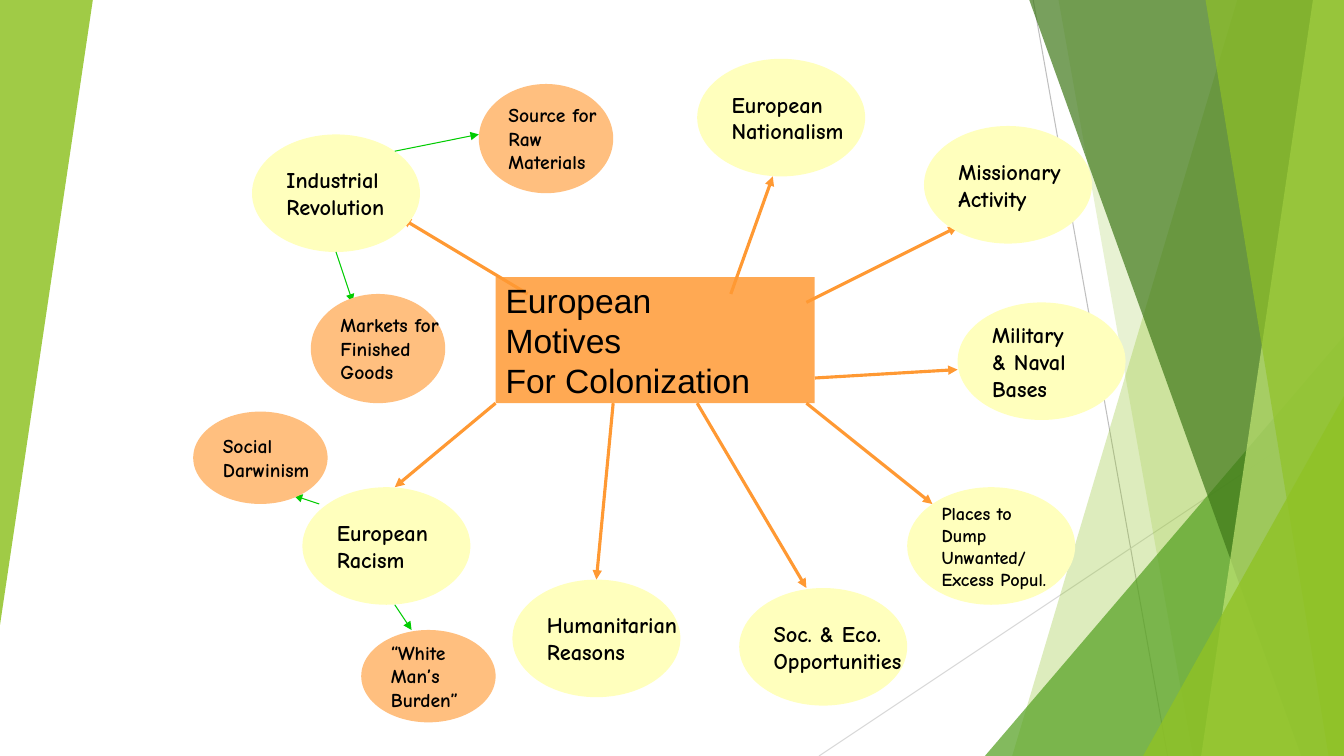
from copy import deepcopy

from pptx import Presentation
from pptx.dml.color import RGBColor
from pptx.enum.shapes import MSO_CONNECTOR as CONN, MSO_SHAPE as SHAPE
from pptx.enum.text import MSO_ANCHOR as ANCHOR, PP_ALIGN as ALIGN
from pptx.oxml.ns import qn
from pptx.util import Pt
from lxml.etree import SubElement

W, H = 960, 540
COLORS = {
    "lime": "90C226", "green": "54A021", "forest": "3F7819", "pale": "C0E474",
    "gray": "BFBFBF", "silver": "D9D9D9", "orange": "FF9933", "peach": "FFBF7F",
    "cream": "FFFFBD", "arrow": "00CC00", "black": "000000",
}
MOTIVE_SIZE = (120, 84)

MOTIVES_BEHIND = [
    ("Industrial\nRevolution", (180, 96), (377, 210), (287, 156), 16),
    ("European\vNationalism", (498, 42), (522, 210), (552, 126), 16),
    ("Missionary\vActivity", (660, 90), (576, 216), (684, 162), 16),
    ("Military\v& Naval\vBases", (684, 216), (582, 270), (684, 264), 16),
]
MOTIVES_FRONT = [
    ("Places to\vDump\vUnwanted/\vExcess Popul.", (648, 348), (576, 288), (666, 360), 13),
    ("Soc. & Eco.\vOpportunities", (528, 420), (498, 288), (576, 420), 16),
    ("Humanitarian\vReasons", (366, 414), (438, 288), (426, 414), 16),
    ("European\vRacism", (216, 348), (354, 288), (282, 348), 16),
]
DETAILS = [
    ("Source for\nRaw\nMaterials", (342, 60, 96, 78), (282, 108), (342, 96)),
    ("Markets for\vFinished\vGoods", (222, 210, 96, 78), (240, 180), (252, 216)),
    ("“White\vMan’s\vBurden”", (258, 450, 96, 66), (282, 432), (294, 450)),
    ("Social\vDarwinism", (138, 294, 96, 66), (228, 360), (210, 354)),
]


def rgb(name):
    return RGBColor.from_string(COLORS[name])


def paint(sp, color, alpha=100):
    sp.shadow.inherit = False
    sp.line.fill.background()
    sp.fill.solid()
    sp.fill.fore_color.rgb = rgb(color)
    if alpha < 100:
        clr = sp.fill._xPr.find(".//" + qn("a:srgbClr"))
        SubElement(clr, qn("a:alpha")).set("val", str(alpha * 1000))


def add_shape(s, kind, box, color, alpha=100):
    sp = s.shapes.add_shape(kind, *(Pt(v) for v in box))
    paint(sp, color, alpha)
    return sp


def add_line(s, start, end, color, width, arrow=False):
    cn = s.shapes.add_connector(CONN.STRAIGHT, *(Pt(v) for v in start + end))
    cn.line.width = Pt(width)
    cn.line.color.rgb = rgb(color)
    if arrow:
        SubElement(cn.line._get_or_add_ln(), qn("a:tailEnd")).set("type", "triangle")
    SubElement(cn._element.spPr, qn("a:effectLst"))


def add_band(s, top, bottom, color, alpha):
    fb = s.shapes.build_freeform(Pt(top), Pt(-0.7))
    fb.add_line_segments([(Pt(x), Pt(y)) for x, y in ((W, -0.7), (W, H), (bottom, H))])
    paint(fb.convert_to_shape(), color, alpha)


def add_triangle(s, box, color, alpha, rotation=0):
    sp = add_shape(s, SHAPE.ISOSCELES_TRIANGLE, box, color, alpha)
    sp.adjustments[0] = 1
    sp.rotation = rotation


def write(sp, text, size=16, font="Comic Neue", bold=True):
    tf = sp.text_frame
    tf.word_wrap = False
    tf.vertical_anchor = ANCHOR.MIDDLE
    tf.text = text
    for p in tf.paragraphs:
        p.alignment = ALIGN.LEFT
        for r in p.runs:
            r.font.size = Pt(size)
            r.font.name = font
            r.font.bold = bold
            r.font.color.rgb = rgb("black")
        for br in p._p.findall(qn("a:br")):
            br.insert(0, deepcopy(p.runs[0]._r.rPr))


def add_motive(s, text, corner, start, end, size):
    add_line(s, start, end, "orange", 2.25, arrow=True)
    write(add_shape(s, SHAPE.OVAL, corner + MOTIVE_SIZE, "cream"), text, size=size)


def add_detail(s, text, box, start, end):
    add_line(s, start, end, "arrow", 0.75, arrow=True)
    write(add_shape(s, SHAPE.OVAL, box, "peach"), text, size=14)


def add_backdrop(s):
    add_line(s, (738, 0), (834, H), "gray", 0.75)
    add_line(s, (W, 290), (585, H), "silver", 0.75)
    add_band(s, 884, 723, "lime", 30)
    add_band(s, 756, 852, "lime", 20)
    add_triangle(s, (703.5, 240, 256.5, 300), "green", 72)
    add_band(s, 735, 929.5, "forest", 70)
    add_band(s, 938, 858, "pale", 70)
    add_band(s, 861, 949, "lime", 65)
    add_triangle(s, (816.5, 283, 143.5, 257), "lime", 80)
    add_triangle(s, (0, 0, 66.3, 446.4), "lime", 85, rotation=180)


def main():
    prs = Presentation()
    prs.slide_width, prs.slide_height = Pt(W), Pt(H)
    s = prs.slides.add_slide(prs.slide_layouts[6])
    add_backdrop(s)
    for motive in MOTIVES_BEHIND:
        add_motive(s, *motive)
    center = add_shape(s, SHAPE.RECTANGLE, (354, 198, 228, 90), "orange", 84)
    write(center, "European\nMotives\nFor Colonization", size=24, font="Arial", bold=False)
    for motive in MOTIVES_FRONT:
        add_motive(s, *motive)
    for detail in DETAILS:
        add_detail(s, *detail)
    prs.save("out.pptx")


if __name__ == "__main__":
    main()
